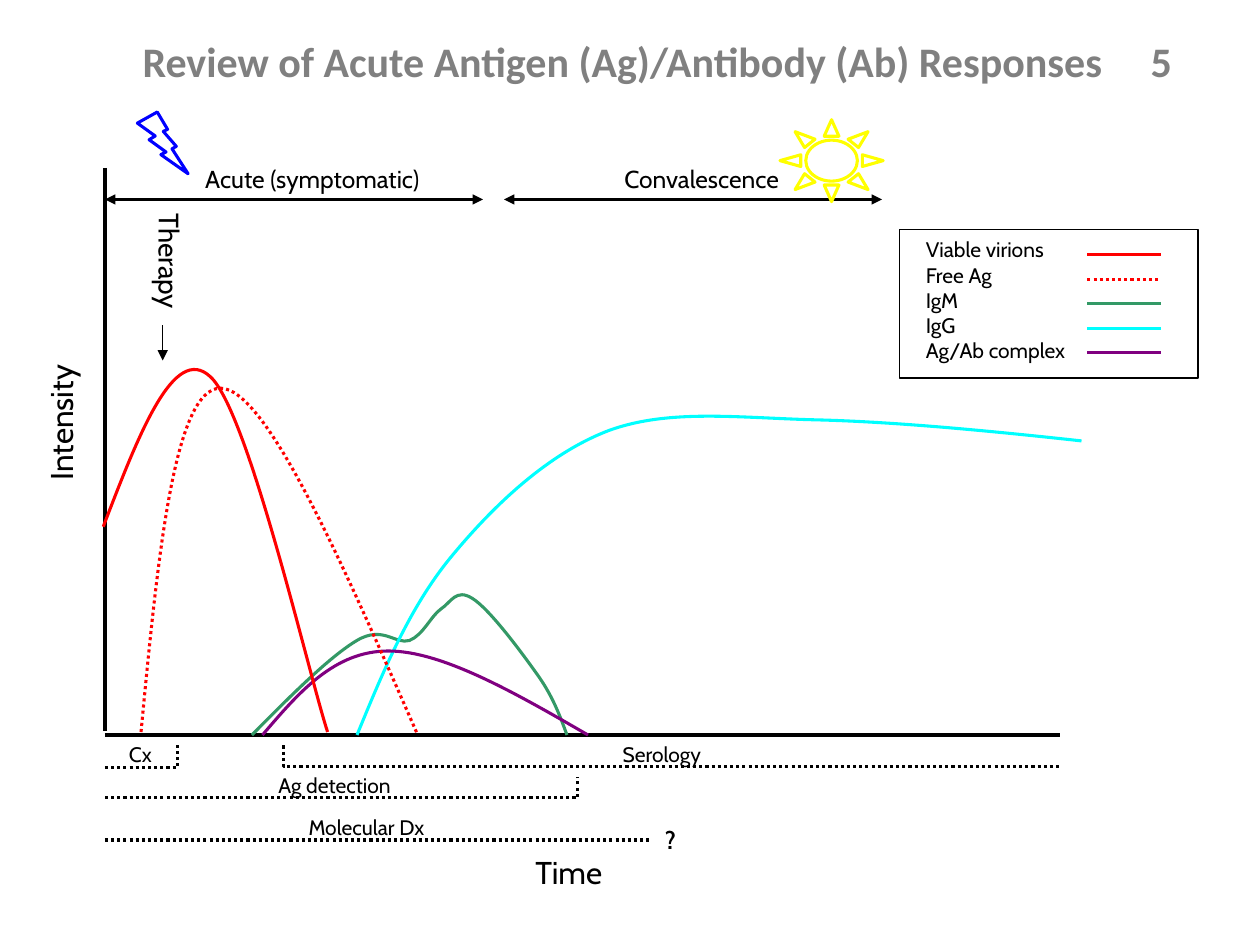
from collections import namedtuple

from lxml import etree
from pptx import Presentation
from pptx import util as u
from pptx.dml import color
from pptx.enum import dml, shapes, text
from pptx.oxml import ns

Box = namedtuple("Box", "left top width height")
COLORS = {
    "black": "000000", "title": "808080", "red": "FF0000", "green": "339966",
    "cyan": "00FFFF", "purple": "800080", "blue": "0000FF", "yellow": "FFFF00",
}
SERIES = [
    ("Viable virions", "red", False,
     [(-1, 119), (19.2, 171.6), (39.4, 224.2), (60.2, 204.7), (81.8, 185.3), (116.4, 34.8),
      (127.2, 1.7)]),
    ("Free Ag", "red", True,
     [(20.6, 1.7), (30, 100.3), (39.4, 198.2), (66, 198.2), (91.9, 198.2), (135.1, 99.6),
      (178.3, 1)]),
    ("IgM", "green", False,
     [(84, 0), (106.3, 22.6), (128.6, 44.9), (144, 54), (158.9, 62.9), (166.1, 51.4),
      (174, 54), (181.9, 57.1), (186.2, 67.9), (192, 72), (197.8, 75.8), (200.6, 84),
      (210, 78), (219.4, 72.2), (236.6, 49.2), (246, 36), (255.4, 23.3), (259.7, 11.8),
      (264, 0)]),
    ("IgG", "cyan", False,
     [(144, 0), (158.9, 36.2), (174, 73), (198, 102), (222.2, 131.3), (253.2, 160.8),
      (288, 174), (323, 186.7), (363.4, 181), (408, 180), (452.6, 178.8), (505.2, 173.8),
      (558, 168)]),
    ("Ag/Ab complex", "purple", False,
     [(90, 0), (110.6, 24), (130.8, 48), (162, 48), (192.7, 48), (234.5, 24), (276, 0)]),
]


def rgb(name):
    """Return the named colour."""
    return color.RGBColor.from_string(COLORS[name])


def style_line(line, name, weight, dotted=False):
    """Set the colour, weight and dash of a line."""
    line.color.rgb = rgb(name)
    line.width = u.Pt(weight)
    if dotted:
        line.dash_style = dml.MSO_LINE.ROUND_DOT


def add_line(page, start, end, name="black", weight=1.75, dotted=False, arrows=()):
    """Draw a straight line with triangles at the given ends."""
    line = page.shapes.add_connector(
        shapes.MSO_CONNECTOR.STRAIGHT, *(u.Pt(value) for value in (*start, *end)))
    style_line(line.line, name, weight, dotted)
    for arrow in arrows:
        etree.SubElement(line.line._get_or_add_ln(), ns.qn(f"a:{arrow}"), type="triangle")
    etree.SubElement(line._element.spPr, ns.qn("a:effectLst"))


def add_outline(page, kind, box, name, weight=1.75):
    """Draw an unfilled preset shape."""
    shape = page.shapes.add_shape(kind, *map(u.Pt, box))
    shape.shadow.inherit = False
    shape.fill.background()
    style_line(shape.line, name, weight)
    return shape


def add_stroke(page, points, name="black", dotted=False, curved=False):
    """Draw an open polyline, or a chain of cubic curves through its points."""
    start, *rest = [(u.Pt(x), u.Pt(y)) for x, y in points]
    builder = page.shapes.build_freeform(*start, scale=1.0)
    builder.add_line_segments(rest, close=False)
    stroke = builder.convert_to_shape()
    stroke.shadow.inherit = False
    stroke.fill.background()
    style_line(stroke.line, name, 1.75, dotted)
    if curved:
        outline = stroke._element.xpath(".//a:path")[0]
        steps = iter(list(outline)[1:])
        for first, second, third in zip(steps, steps, steps):
            first.tag = ns.qn("a:cubicBezTo")
            first.extend([second[0], third[0]])
            outline.remove(second)
            outline.remove(third)


def add_label(page, box, lines, size, align=text.PP_ALIGN.CENTER, bold=None, turn=0):
    """Place black text, one paragraph for each line."""
    label = page.shapes.add_textbox(*map(u.Pt, box))
    label.rotation = turn
    frame = label.text_frame
    frame.word_wrap = False
    for index, line in enumerate(lines):
        para = frame.add_paragraph() if index else frame.paragraphs[0]
        para.alignment = align
        span = para.add_run()
        span.text = line
        span.font.name, span.font.size, span.font.bold = "Cabin", u.Pt(size), bold
        span.font.color.rgb = rgb("black")


def fill_title(page, box, wording):
    """Fill and format the title placeholder."""
    title = page.shapes.title
    title.left, title.top, title.width, title.height = map(u.Pt, box)
    frame = title.text_frame
    frame.auto_size = text.MSO_AUTO_SIZE.NONE
    frame.vertical_anchor = text.MSO_ANCHOR.TOP
    para = frame.paragraphs[0]
    para.alignment = text.PP_ALIGN.RIGHT
    span = para.add_run()
    span.text = wording
    span.font.name, span.font.size, span.font.bold = "Calibri", u.Pt(24), True
    span.font.color.rgb = rgb("title")


def draw_plot(page, box):
    """Draw the axes, their names, the therapy mark and the curves."""
    left, base = box.left, box.top + box.height
    add_line(page, (left, box.top), (left, base - 2), weight=2.25)
    add_line(page, (left, base), (left + box.width, base), weight=2.25)
    add_label(page, Box(left + 238, base + 64, 54, 29), ["Time"], 18)
    add_label(page, Box(left - 67, box.top + 131, 83.5, 29), ["Intensity"], 18, turn=270)
    add_label(page, Box(left + 0.5, box.top + 40, 72.7, 26.6), ["Therapy"], 16, turn=90.2)
    add_line(page, (left + 33, box.top + 90), (left + 33, box.top + 110),
             weight=0.75, arrows=["tailEnd"])
    for _, name, dotted, points in SERIES[2:] + SERIES[:2]:
        add_stroke(page, [(left + x, base - rise) for x, rise in points],
                   name, dotted, curved=True)


def draw_phases(page, box):
    """Draw the two illness phases with their arrows and symbols."""
    y = box.top + box.height
    for start, label_left, label_width, label in [
            (0, 35, 167, "Acute (symptomatic)"), (228, 279, 124, "Convalescence")]:
        add_line(page, (box.left + start, y), (box.left + start + 216, y),
                 arrows=["headEnd", "tailEnd"])
        add_label(page, Box(box.left + label_left, y - 24, label_width, 24.5), [label], 14)
    add_outline(page, shapes.MSO_SHAPE.LIGHTNING_BOLT,
                Box(box.left + 18.5, box.top, 29, 35.3), "blue")
    add_outline(page, shapes.MSO_SHAPE.SUN,
                Box(box.left + 385.7, box.top + 4.4, 59, 46.8), "yellow")


def draw_legend(page, box):
    """Draw the framed key of the curves."""
    add_outline(page, shapes.MSO_SHAPE.RECTANGLE, box, "black", 0.75)
    add_label(page, Box(box.left + 8, box.top + 0.8, 95, 80),
              [label for label, *_ in SERIES], 12, text.PP_ALIGN.LEFT)
    for index, (_, name, dotted, _) in enumerate(SERIES):
        y = box.top + 14.5 + 14 * index
        add_line(page, (box.left + 107.4, y), (box.left + 149.4, y), name, dotted=dotted)


def draw_windows(page, box):
    """Draw the dotted span in which each test is useful."""
    for points, label_box, label in [
            ([(0, 12.4), (41.6, 12.4), (41.6, 0)], (6.2, -6, 28, 21.8), "Cx"),
            ([(0, 30), (270, 30), (270, 18)], (84, 12, 94.3, 21.8), "Ag detection"),
            ([(102, 0), (102, 12), (546, 12)], (288, -6, 60.5, 21.8), "Serology")]:
        add_stroke(page, [(box.left + x, box.top + y) for x, y in points], dotted=True)
        x, y, width, height = label_box
        add_label(page, Box(box.left + x, box.top + y, width, height), [label], 12)
    y = box.top + box.height
    add_line(page, (box.left, y), (box.left + 312, y), dotted=True)
    add_label(page, Box(box.left + 108, y - 18, 82.8, 21.8), ["Molecular Dx"], 12)
    add_label(page, Box(box.left + 312, y - 12, 22.5, 24), ["?"], 14, bold=True)


def main():
    """Build the slide and save the deck."""
    deck = Presentation()
    deck.slide_width, deck.slide_height = u.Pt(720), u.Pt(540)
    page = deck.slides.add_slide(deck.slide_layouts[5])
    fill_title(page, Box(50.4, 16.6, 626.4, 36),
               "Review of Acute Antigen (Ag)/Antibody (Ab) Responses\t5")
    draw_plot(page, Box(60, 96, 546, 324))
    draw_legend(page, Box(514, 131, 170.6, 85))
    draw_windows(page, Box(60, 426, 546, 54))
    draw_phases(page, Box(60, 64, 444, 50))
    deck.save("out.pptx")


if __name__ == "__main__":
    main()
